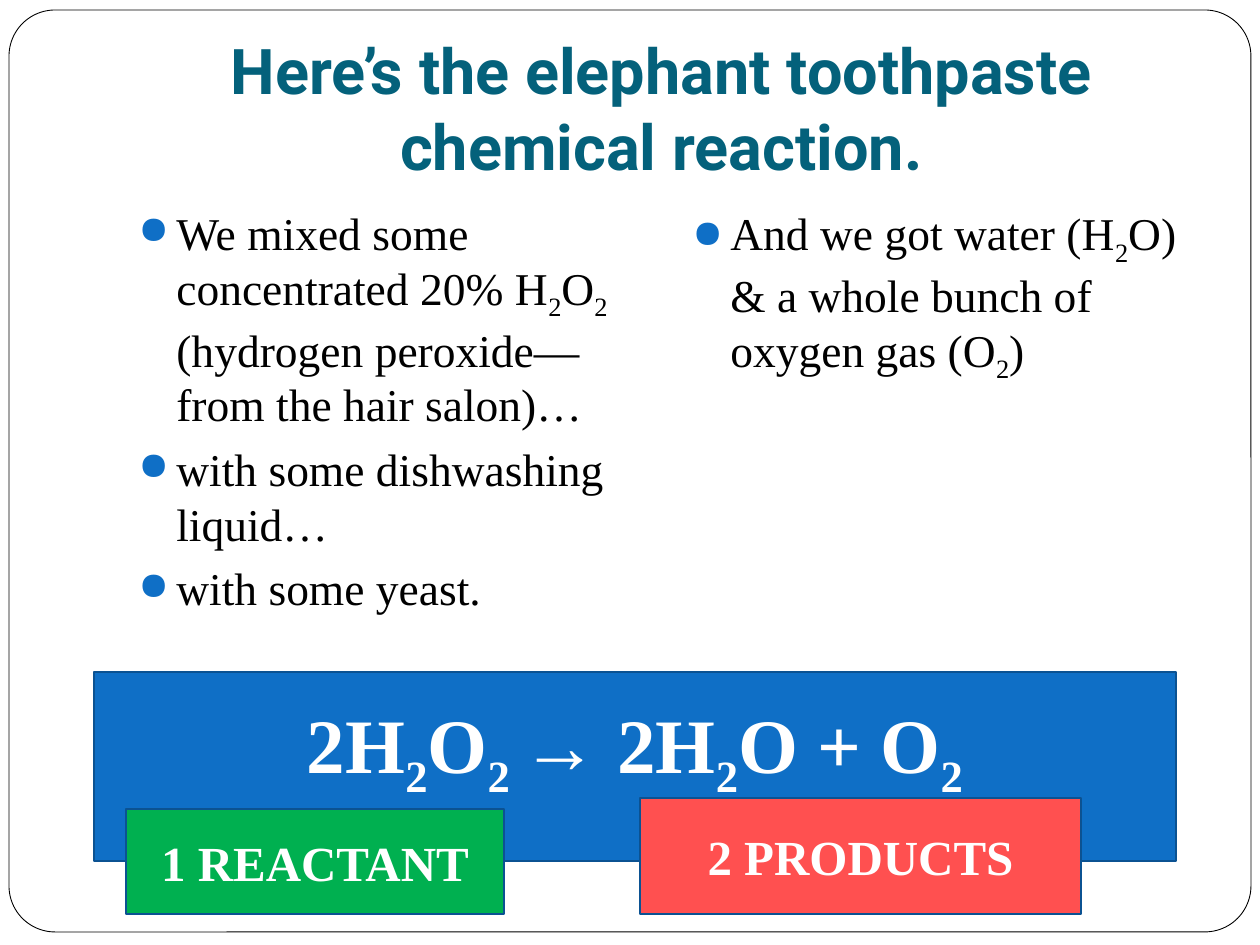
from dataclasses import dataclass

import pptx
import pptx.dml.color
import pptx.enum.shapes
import pptx.enum.text
import pptx.util
from lxml import etree

PX = 914400 / 126
ALIGN = pptx.enum.text.PP_ALIGN
ANCHOR = pptx.enum.text.MSO_ANCHOR
SHAPE = pptx.enum.shapes.MSO_SHAPE


@dataclass(frozen=True)
class Theme:
    heading_font: str = "Roboto"
    body_font: str = "Times New Roman"
    title: str = "04617B"
    ink: str = "000000"
    paper: str = "FFFFFF"
    blue: str = "0F6FC6"
    edge: str = "0B5292"
    green: str = "00B050"
    red: str = "FF5050"
    title_size: int = 36
    body_size: int = 26
    equation_size: int = 44
    label_size: int = 28


def px(n):
    return pptx.util.Emu(round(n * PX))


def rgb(value):
    return pptx.dml.color.RGBColor.from_string(value)


class SlideBuilder:
    """Draws styled elements on one slide, with lengths in px."""

    def __init__(self, prs, theme):
        self.theme = theme
        self.slide = prs.slides.add_slide(prs.slide_layouts[5])

    def add_runs(self, p, text, size, color, font=None, bold=False):
        """Add runs to a paragraph; every second piece between underscores is a subscript."""
        for i, piece in enumerate(text.split("_")):
            r = p.add_run()
            r.text = piece
            r.font.name = font or self.theme.body_font
            r.font.size = pptx.util.Pt(size)
            r.font.bold = bold
            r.font.color.rgb = rgb(color)
            if i % 2:
                r.font._element.set("baseline", "-25000")

    def title(self, text, x, y, w, h):
        """Place and format the title placeholder."""
        sp = self.slide.shapes.title
        sp.left, sp.top, sp.width, sp.height = map(px, (x, y, w, h))
        tf = sp.text_frame
        tf.word_wrap = True
        tf.vertical_anchor = ANCHOR.BOTTOM
        tf.margin_bottom = px(13)
        p = tf.paragraphs[0]
        p.alignment = ALIGN.CENTER
        t = self.theme
        self.add_runs(p, text, t.title_size, t.title, t.heading_font, True)

    def bullets(self, items, x, y, w, h):
        """Add a text box with one bulleted paragraph per item."""
        tf = self.slide.shapes.add_textbox(*map(px, (x, y, w, h))).text_frame
        tf.word_wrap = True
        for i, item in enumerate(items):
            p = tf.add_paragraph() if i else tf.paragraphs[0]
            p.space_before = pptx.util.Pt(5.8)
            self.add_runs(p, item, self.theme.body_size, self.theme.ink)
            self.bullet(p)

    def bullet(self, p):
        """Give a paragraph a round bullet and a hanging indent."""
        pPr = p._p.get_or_add_pPr()
        pPr.set("marL", str(px(38)))
        pPr.set("indent", str(px(-38)))
        ns = pPr.nsmap["a"]
        clr = etree.SubElement(pPr, f"{{{ns}}}buClr")
        etree.SubElement(clr, f"{{{ns}}}srgbClr", val=self.theme.blue)
        etree.SubElement(pPr, f"{{{ns}}}buSzPct", val="85000")
        etree.SubElement(pPr, f"{{{ns}}}buChar", char="●")

    def shape(self, kind, x, y, w, h, fill, line, weight):
        """Add a filled and outlined preset shape."""
        sp = self.slide.shapes.add_shape(kind, *map(px, (x, y, w, h)))
        sp.shadow.inherit = False
        sp.fill.solid()
        sp.fill.fore_color.rgb = rgb(fill)
        sp.line.color.rgb = rgb(line)
        sp.line.width = pptx.util.Pt(weight)
        return sp

    def frame(self, x, y, w, h):
        """Add the rounded page frame behind everything else."""
        t = self.theme
        sp = self.shape(SHAPE.ROUNDED_RECTANGLE, x, y, w, h, t.paper, t.ink, 0.5)
        sp.adjustments[0] = 0.05
        self.slide.shapes._spTree.insert(2, sp._element)

    def box(self, text, x, y, w, h, fill, size, bottom=6):
        """Add a rectangle with centred bold text."""
        sp = self.shape(SHAPE.RECTANGLE, x, y, w, h, fill, self.theme.edge, 1)
        tf = sp.text_frame
        tf.word_wrap = True
        tf.vertical_anchor = ANCHOR.MIDDLE
        tf.margin_bottom = px(bottom)
        p = tf.paragraphs[0]
        p.alignment = ALIGN.CENTER
        self.add_runs(p, text, size, self.theme.paper, bold=True)


def main():
    prs = pptx.Presentation()
    prs.slide_width, prs.slide_height = px(1260), px(945)
    t = Theme()
    s = SlideBuilder(prs, t)
    s.frame(9, 10, 1242, 922)
    s.title("Here’s the elephant toothpaste chemical reaction.", 126, 38, 1071, 158)
    s.bullets([
        "We mixed some concentrated 20% H_2_O_2_ (hydrogen peroxide—from the hair salon)…",
        "with some dishwashing liquid…",
        "with some yeast.",
    ], 126, 199, 517, 472)
    s.bullets(["And we got water (H_2_O) & a whole bunch of oxygen gas (O_2_)"],
              680, 199, 517, 441)
    s.box("2H_2_O_2 _→ 2H_2_O + O_2", 94, 672, 1082, 189, t.blue, t.equation_size, 42)
    s.box("1 REACTANT", 126, 809, 378, 105, t.green, t.label_size)
    s.box("2 PRODUCTS", 640, 798, 441, 116, t.red, t.label_size)
    prs.save("out.pptx")


if __name__ == "__main__":
    main()
